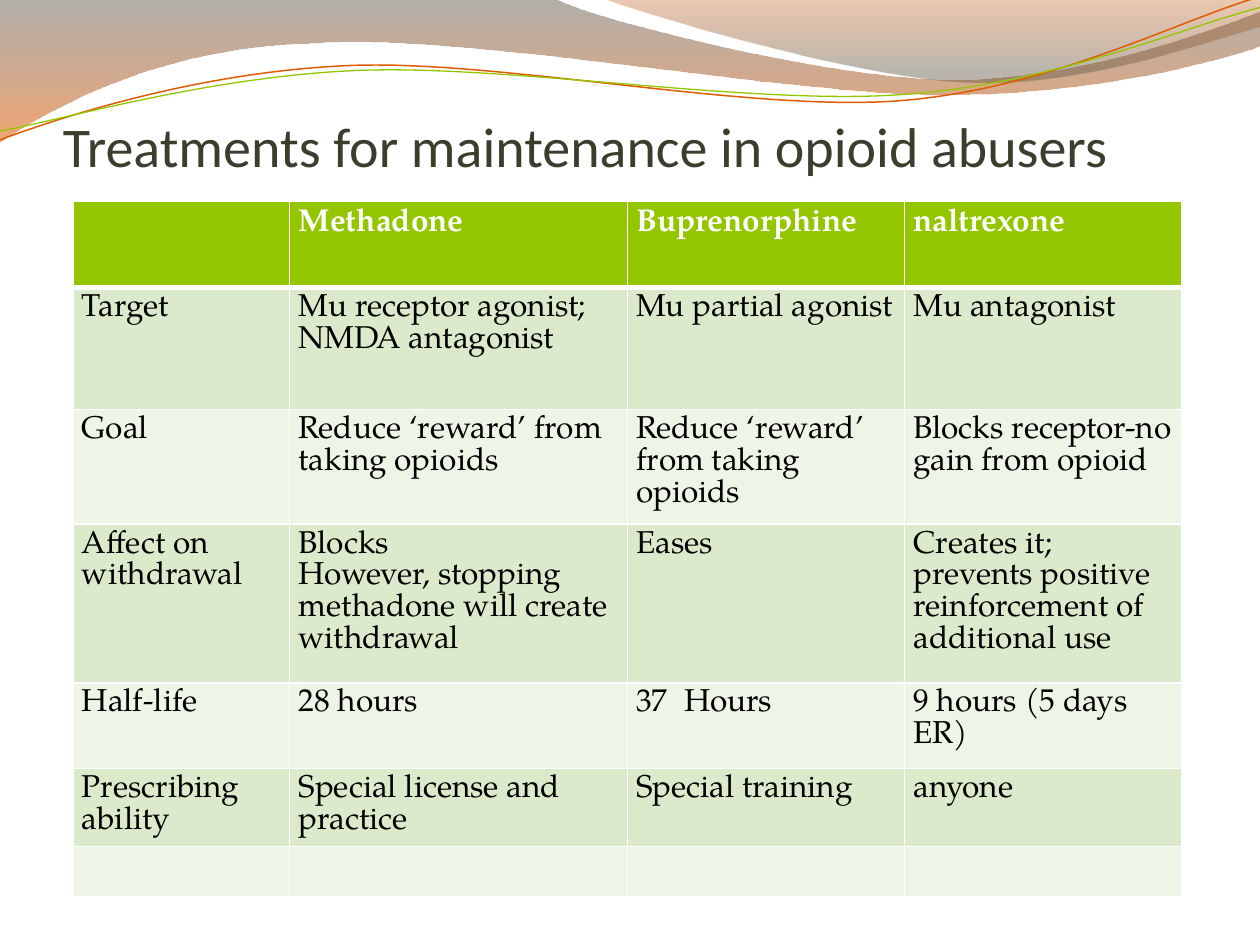
import math

from lxml import etree
from pptx import Presentation, util as u
from pptx.dml.color import RGBColor
from pptx.enum import text
from pptx.oxml.ns import qn

WHITE = RGBColor(0xFF, 0xFF, 0xFF)
BLACK = RGBColor(0, 0, 0)
TITLE = RGBColor(0x3E, 0x3D, 0x2D)
GREEN = RGBColor(0x94, 0xC6, 0x00)
ORANGE = RGBColor(0xE1, 0x5B, 0x00)
BANDS = (RGBColor(0xDC, 0xEA, 0xCC), RGBColor(0xEE, 0xF5, 0xE7))
GREY_BROWN = RGBColor(0x55, 0x4D, 0x41)
BRIGHT_ORANGE = RGBColor(0xE7, 0x5D, 0x00)
RUST = RGBColor(0xBD, 0x4C, 0x00)
TAUPE = RGBColor(0x68, 0x5D, 0x4B)

TITLE_TEXT = "Treatments for maintenance in opioid abusers"
NUMBERED = (4, 2)  # the cell whose number is an automatic list number
LIST_START = 37
ROWS = [
    ["", "Methadone", "Buprenorphine", "naltrexone"],
    ["Target", "Mu receptor agonist; NMDA antagonist", "Mu partial agonist", "Mu antagonist"],
    ["Goal", "Reduce ‘reward’ from taking opioids", "Reduce ‘reward’ from taking opioids",
     "Blocks receptor-no gain from opioid"],
    ["Affect on withdrawal", "Blocks\nHowever, stopping methadone will create withdrawal", "Eases",
     "Creates it; prevents positive reinforcement of additional use"],
    ["Half-life", "28 hours", "Hours", "9 hours (5 days ER)"],
    ["Prescribing ability", "Special license and practice", "Special training", "anyone"],
    ["", "", "", ""],
]
COLUMN_WIDTHS = [1.72, 2.68, 2.2, 2.2]
ROW_HEIGHTS = [0.68, 0.97, 0.91, 1.26, 0.68, 0.62, 0.39]

# Each step is a line end (2 numbers) or a cubic curve (6 numbers), in inches
BANNERS = [
    ((0, 0), [(4.4, -0.01), (4.76, 0.17, 6.64, 0.63, 7.58, 0.63), (8.53, 0.63, 9.58, 0.26, 10, 0.09),
              (10.01, 0.36), (9.83, 0.44, 8.7, 0.76, 7.46, 0.75), (6.22, 0.75, 3.82, 0.28, 2.57, 0.34),
              (1.29, 0.36, 0.46, 0.83, -0.01, 1.13)],
     [(0, GREY_BROWN, 45), (1, BRIGHT_ORANGE, 55)]),
    ((4.79, -0.01), [(5.09, 0.11, 6.82, 0.62, 7.69, 0.65), (8.56, 0.69, 9.61, 0.32, 10, 0.21), (10, 0)],
     [(0, RUST, 30), (0.8, TAUPE, 45)]),
]
WAVES = [
    ((0, 1.11), [(0.48, 0.93, 1.58, 0.57, 2.77, 0.52), (3.95, 0.47, 5.93, 0.89, 7.13, 0.8),
                 (8.33, 0.71, 9.38, 0.15, 9.98, -0.02)], ORANGE, 0.85, (4.99, 0.58)),
    ((0, 1.04), [(0.47, 0.96, 1.64, 0.61, 2.83, 0.56), (4.03, 0.51, 5.97, 0.84, 7.17, 0.75),
                 (8.36, 0.67, 9.41, 0.21, 10, 0.06)], GREEN, 0.75, (5, 0.59)),
]
WAVE_TILT = -2.7


def turn(point, center, degrees):
    angle = math.radians(degrees)
    dx, dy = point[0] - center[0], point[1] - center[1]
    return (center[0] + dx * math.cos(angle) - dy * math.sin(angle),
            center[1] + dx * math.sin(angle) + dy * math.cos(angle))


def add_outline(page, start, steps, close, center=(0, 0), tilt=0):
    """Lay out all path points, then join each curve's three points into one cubic."""
    points = [start] + [step[i:i + 2] for step in steps for i in range(0, len(step), 2)]
    points = [tuple(u.Inches(v) for v in turn(point, center, -tilt)) for point in points]
    builder = page.shapes.build_freeform(*points[0])
    builder.add_line_segments(points[1:], close=close)
    shape = builder.convert_to_shape()
    segments = iter(list(shape._element.iter(qn("a:lnTo"))))
    for step in steps:
        group = [next(segments) for _ in range(len(step) // 2)]
        if len(group) == 3:
            curve = etree.Element(qn("a:cubicBezTo"))
            group[0].addprevious(curve)
            for segment in group:
                curve.append(segment[0])
                segment.getparent().remove(segment)
    shape.rotation = tilt
    shape.shadow.inherit = False
    return shape


def add_banner(page, start, steps, stops):
    shape = add_outline(page, start, steps, True)
    shape.fill.gradient()
    shape.fill.gradient_angle = 270
    for stop, (position, color, _) in zip(shape.fill.gradient_stops, stops):
        stop.position = position
        stop.color.rgb = color
    for element, (_, _, opacity) in zip(shape._element.spPr.iter(qn("a:srgbClr")), stops):
        etree.SubElement(element, qn("a:alpha"), val=str(opacity * 1000))
    shape.line.fill.background()


def add_wave(page, start, steps, color, width, center):
    shape = add_outline(page, start, steps, False, center, WAVE_TILT)
    shape.fill.background()
    shape.line.color.rgb = color
    shape.line.width = u.Pt(width)


def add_run(para, words, font, size, color, bold=False):
    span = para.add_run()
    span.text = words
    span.font.name, span.font.size = font, u.Pt(size)
    span.font.color.rgb, span.font.bold = color, bold


def set_borders(cell, bottom):
    """White cell borders, placed before the cell fill."""
    properties = cell._tc.get_or_add_tcPr()
    for index, (side, width) in enumerate((("L", 1), ("R", 1), ("T", 1), ("B", bottom))):
        line = etree.Element(qn("a:ln" + side), w=str(u.Pt(width)))
        fill = etree.SubElement(line, qn("a:solidFill"))
        etree.SubElement(fill, qn("a:srgbClr"), val=str(WHITE))
        properties.insert(index, line)


def number_paragraph(para, start):
    properties = para._p.get_or_add_pPr()
    indent = u.Inches(0.38)
    properties.set("marL", str(indent))
    properties.set("indent", str(-indent))
    etree.SubElement(properties, qn("a:buAutoNum"), type="arabicPlain", startAt=str(start))


def fill_cell(cell, words, row, column):
    header = row == 0
    cell.margin_left = cell.margin_right = u.Inches(0.07)
    cell.margin_top = cell.margin_bottom = u.Inches(0.05)
    cell.fill.solid()
    cell.fill.fore_color.rgb = GREEN if header else BANDS[(row - 1) % 2]
    set_borders(cell, 3 if header else 1)
    for index, line in enumerate(words.split("\n") if words else []):
        para = cell.text_frame.paragraphs[0] if index == 0 else cell.text_frame.add_paragraph()
        if (row, column) == NUMBERED:
            number_paragraph(para, LIST_START)
        para.line_spacing = u.Pt(18.1)
        add_run(para, line, "TeX Gyre Pagella", 18, WHITE if header else BLACK, header)


def add_treatment_table(page):
    frame = page.shapes.add_table(len(ROWS), len(COLUMN_WIDTHS), u.Inches(0.58), u.Inches(1.6),
                                  u.Inches(sum(COLUMN_WIDTHS)), u.Inches(sum(ROW_HEIGHTS)))
    table = frame.table
    for column, width in zip(table.columns, COLUMN_WIDTHS):
        column.width = u.Inches(width)
    for row, height in zip(table.rows, ROW_HEIGHTS):
        row.height = u.Inches(height)
    for r, entries in enumerate(ROWS):
        for c, words in enumerate(entries):
            fill_cell(table.cell(r, c), words, r, c)


def main():
    deck = Presentation()
    deck.slide_width, deck.slide_height = u.Inches(10), u.Inches(7.5)
    page = deck.slides.add_slide(deck.slide_layouts[6])

    # Wavy header
    for banner in BANNERS:
        add_banner(page, *banner)
    for wave in WAVES:
        add_wave(page, *wave)

    # Title
    box = page.shapes.add_textbox(u.Inches(0.5), u.Inches(0.25), u.Inches(9), u.Inches(1.17))
    frame = box.text_frame
    frame.word_wrap = True
    frame.vertical_anchor = text.MSO_ANCHOR.BOTTOM
    frame.margin_left = frame.margin_right = frame.margin_bottom = 0
    frame.margin_top = u.Inches(0.05)
    add_run(frame.paragraphs[0], TITLE_TEXT, "Calibri", 32, TITLE)

    # Table
    add_treatment_table(page)
    deck.save("out.pptx")


if __name__ == "__main__":
    main()
